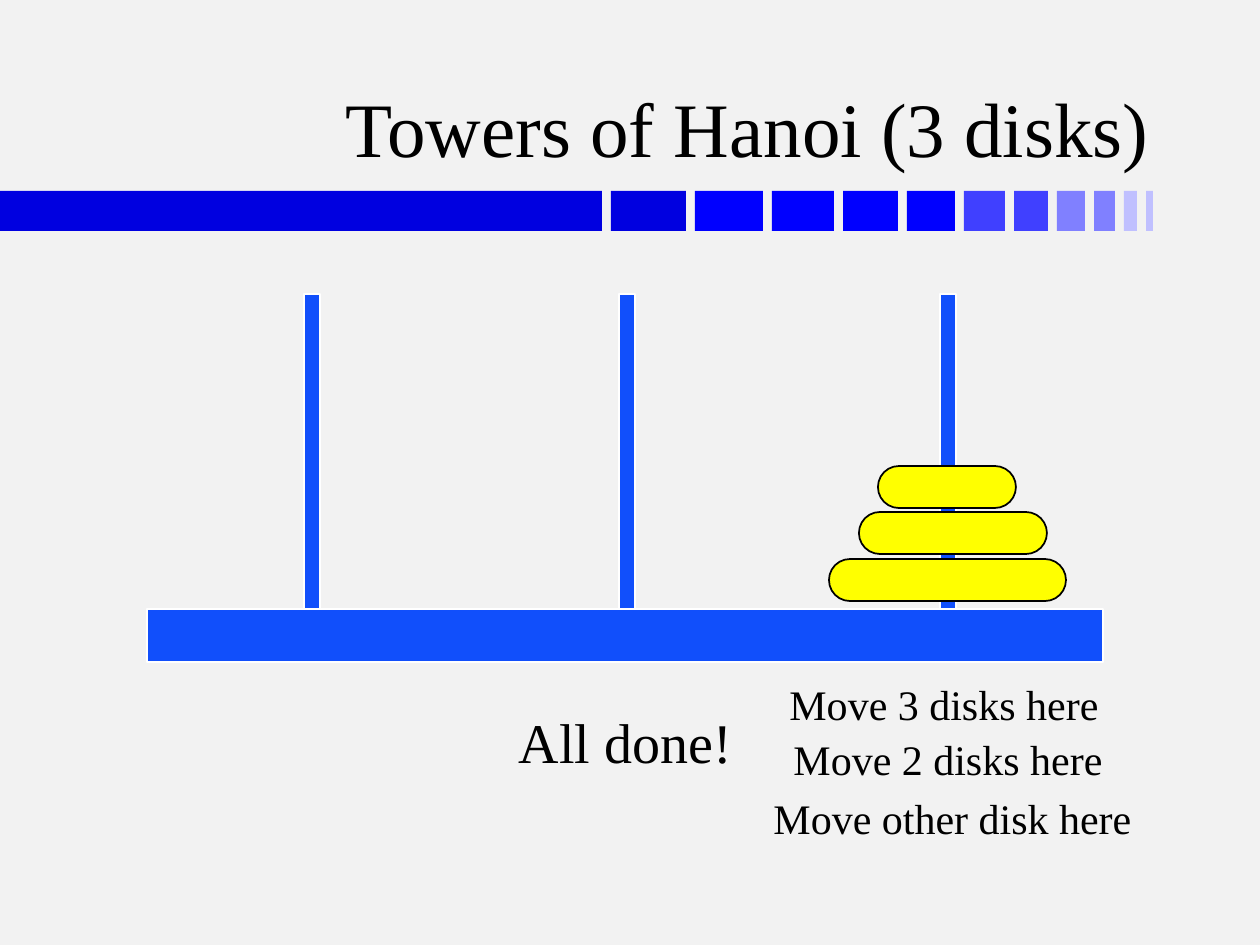
from pptx import Presentation
from pptx.dml.color import RGBColor
from pptx.enum.shapes import MSO_SHAPE as Shape
from pptx.enum.text import MSO_ANCHOR as Anchor, MSO_AUTO_SIZE as AutoSize, PP_ALIGN as Align
from pptx.util import Emu, Pt

PX = 914400 / 126
COLORS = {
    "background": "F2F2F2", "text": "000000", "navy": "0000E0", "blue": "0000FF",
    "mid": "4040FF", "light": "8080FF", "pale": "C0C0FF",
    "tower": "114FFB", "tower_edge": "FFFFFF", "disk": "FFFF00", "disk_edge": "000000",
}


def add_block(kind, box, fill, edge=None):
    block = slide.shapes.add_shape(kind, *(Emu(round(n * PX)) for n in box))
    block.shadow.inherit = False
    block.fill.solid()
    block.fill.fore_color.rgb = RGBColor.from_string(COLORS[fill])
    if edge:
        block.line.color.rgb = RGBColor.from_string(COLORS[edge])
        block.line.width = Pt(1)
    else:
        block.line.fill.background()
    return block


def write_line(frame, text, size, align, frame_format):
    for key, value in frame_format.items():
        setattr(frame, key, value)
    frame.text = text
    paragraph = frame.paragraphs[0]
    paragraph.alignment = align
    for key, value in {"name": "Times New Roman", "size": Pt(size)}.items():
        setattr(paragraph.font, key, value)
    paragraph.font.color.rgb = RGBColor.from_string(COLORS["text"])


deck = Presentation()
deck.slide_width, deck.slide_height = Emu(round(1260 * PX)), Emu(round(945 * PX))
slide = deck.slides.add_slide(deck.slide_layouts[5])
slide.background.fill.solid()
slide.background.fill.fore_color.rgb = RGBColor.from_string(COLORS["background"])

# Fading bar below the title
bar_left, bar_gap = 0, 9
for width, shade in [
    (602, "navy"), (75, "navy"), (68, "blue"), (62, "blue"), (55, "blue"), (48, "blue"),
    (41, "mid"), (34, "mid"), (28, "light"), (21, "light"), (13, "pale"), (7, "pale"),
]:
    add_block(Shape.RECTANGLE, (bar_left, 191, width, 40), shade)
    bar_left += width + bar_gap

title = slide.shapes.title
for side, length in {"left": 93, "top": 24, "width": 1069, "height": 155}.items():
    setattr(title, side, Emu(round(length * PX)))
write_line(title.text_frame, "Towers of Hanoi (3 disks)", 44, Align.RIGHT,
           {"vertical_anchor": Anchor.BOTTOM, "auto_size": AutoSize.NONE, "word_wrap": True})

# Base and pegs
add_block(Shape.RECTANGLE, (147, 609, 956, 53), "tower", "tower_edge")
for peg_left in (304, 619, 940):
    add_block(Shape.RECTANGLE, (peg_left, 294, 16, 315), "tower", "tower_edge")

# Disks, largest first
for left, top, width in [(829, 559, 237), (859, 512, 188), (878, 466, 138)]:
    disk = add_block(Shape.ROUNDED_RECTANGLE, (left, top, width, 42), "disk", "disk_edge")
    disk.adjustments[0] = 0.5

for text, size, box in [
    ("Move 3 disks here", 24, (775, 672, 338, 63)),
    ("Move 2 disks here", 24, (779, 727, 338, 63)),
    ("Move other disk here", 24, (759, 786, 387, 64)),
    ("All done!", 32, (505, 701, 241, 81)),
]:
    caption = slide.shapes.add_textbox(*(Emu(round(n * PX)) for n in box))
    write_line(caption.text_frame, text, size, Align.CENTER,
               {"word_wrap": False, "auto_size": AutoSize.SHAPE_TO_FIT_TEXT})

deck.save("out.pptx")
